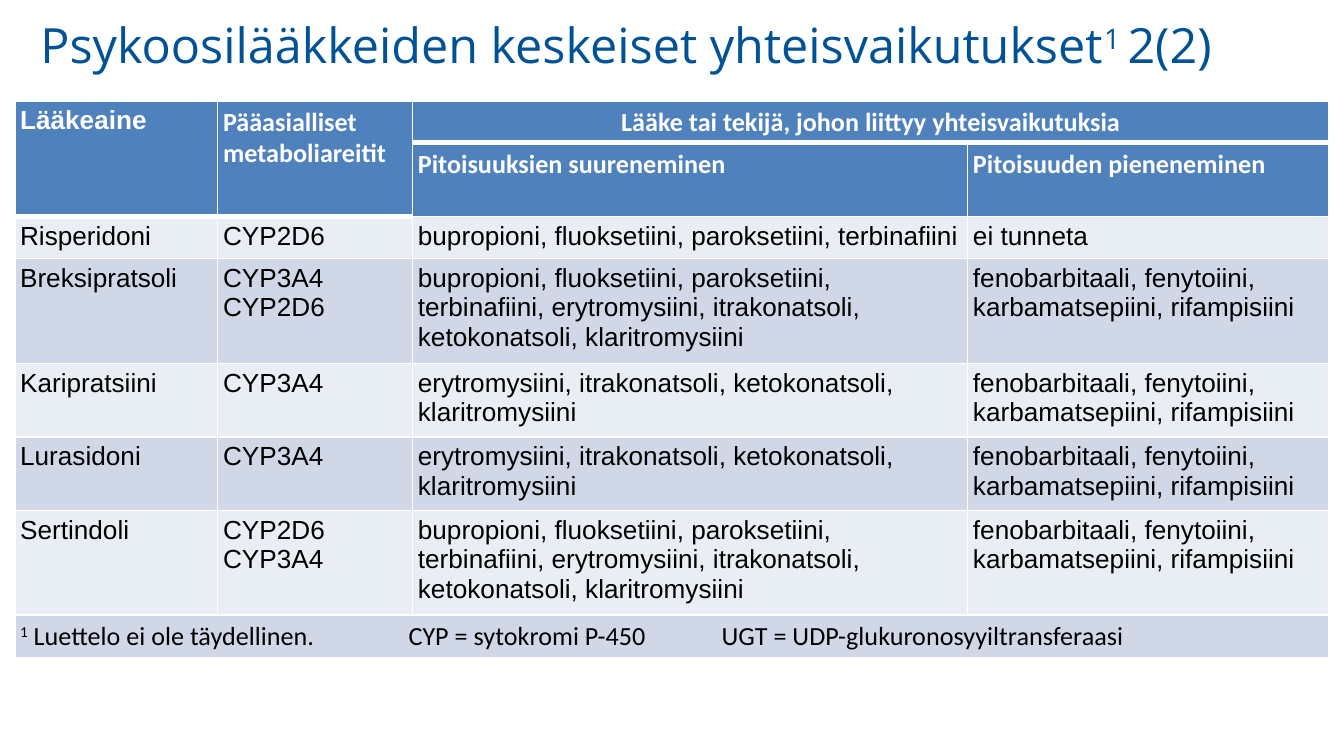
from dataclasses import dataclass
from itertools import product

from lxml import etree
from pptx import Presentation
from pptx.dml.color import RGBColor
from pptx.enum import text
from pptx.oxml import ns
from pptx.util import Inches, Pt


@dataclass(frozen=True)
class Theme:
    title: str = "005296"
    head: str = "4F81BD"
    light: str = "E9EDF4"
    dark: str = "D0D8E8"
    white: str = "FFFFFF"
    black: str = "000000"
    display: str = "Open Sans"
    label: str = "Calibri"
    body: str = "Arial"
    large: int = 26
    small: int = 14


THEME = Theme()
COLS = [1.51, 1.45, 4.13, 2.69]
ROWS = [0.22, 0.22, 0.22, 0.54, 0.38, 0.38, 0.54, 0.22]
AZOLES = "erytromysiini, itrakonatsoli, ketokonatsoli, klaritromysiini"
BASE = "bupropioni, fluoksetiini, paroksetiini, terbinafiini"
ALL = f"{BASE}, {AZOLES}"
LOWER = "fenobarbitaali, fenytoiini, karbamatsepiini, rifampisiini"
HEADS = [
    ["Lääkeaine", "Pääasialliset metaboliareitit",
     "Lääke tai tekijä, johon liittyy yhteisvaikutuksia", ""],
    ["", "", "Pitoisuuksien suureneminen", "Pitoisuuden pieneneminen"],
]
DRUGS = [
    ["Risperidoni", "CYP2D6", BASE, "ei tunneta"],
    ["Breksipratsoli", "CYP3A4\vCYP2D6", ALL, LOWER],
    ["Karipratsiini", "CYP3A4", AZOLES, LOWER],
    ["Lurasidoni", "CYP3A4", AZOLES, LOWER],
    ["Sertindoli", "CYP2D6\vCYP3A4", ALL, LOWER],
]
NOTE = ["Luettelo ei ole täydellinen.", "CYP = sytokromi P-450",
        "UGT = UDP-glukuronosyyiltransferaasi"]


def style(para, face, size, color, bold=False):
    font = para.font
    font.name, font.size, font.bold = face, Pt(size), bold
    font.color.rgb = RGBColor.from_string(color)


def add_runs(para, parts):
    for words, raised in parts:
        run = para.add_run()
        run.text = words
        if raised:
            run._r.get_or_add_rPr().set("baseline", "30000")


def add_tabs(para, stops):
    tabs = etree.SubElement(para._p.get_or_add_pPr(), ns.qn("a:tabLst"))
    for stop in stops:
        etree.SubElement(tabs, ns.qn("a:tab"), pos=str(Inches(stop)), algn="l")


def add_edges(cell, thick):
    props = cell._tc.get_or_add_tcPr()
    for side in "LRTB":
        width = 3 if side == "B" and thick else 1
        line = etree.SubElement(props, ns.qn(f"a:ln{side}"), w=str(Pt(width)))
        fill = etree.SubElement(line, ns.qn("a:solidFill"))
        etree.SubElement(fill, ns.qn("a:srgbClr"), val=THEME.white)


def format_cell(cell, fill, thick=False):
    add_edges(cell, thick)
    cell.fill.solid()
    cell.fill.fore_color.rgb = RGBColor.from_string(fill)
    cell.margin_left = cell.margin_right = Inches(0.04)
    cell.margin_top = cell.margin_bottom = Inches(0.04)


def place_title(slide, left, top, width, height):
    title = slide.shapes.title
    title.left, title.top = Inches(left), Inches(top)
    title.width, title.height = Inches(width), Inches(height)
    frame = title.text_frame
    frame.margin_left = Inches(0.19)
    frame.vertical_anchor = text.MSO_ANCHOR.MIDDLE
    frame.auto_size = text.MSO_AUTO_SIZE.SHAPE_TO_FIT_TEXT
    para = frame.paragraphs[0]
    para.alignment = text.PP_ALIGN.LEFT
    add_runs(para, [("Psykoosilääkkeiden keskeiset yhteisvaikutukset", False),
                    ("1 ", True), ("2(2)", False)])
    style(para, THEME.display, THEME.large, THEME.title)


def place_table(slide, left, top, width, height):
    holder = slide.shapes.add_table(
        len(ROWS), len(COLS), Inches(left), Inches(top),
        Inches(width), Inches(height))
    table = holder.table
    table.first_row = table.horz_banding = False
    for col, size in zip(table.columns, COLS):
        col.width = Inches(size)
    for row, size in zip(table.rows, ROWS):
        row.height = Inches(size)
    holder.width, holder.height = Inches(width), Inches(height)

    last = len(ROWS) - 1
    for row, col in product(range(len(ROWS)), range(len(COLS))):
        cell = table.cell(row, col)
        head = row < len(HEADS)
        band = THEME.dark if row % 2 else THEME.light
        thick = row == 0 or (row == 1 and col < 2)
        format_cell(cell, THEME.head if head else band, thick)
        if row == last:
            continue
        words = (HEADS + DRUGS)[row][col]
        if not words:
            continue
        cell.text = words
        face = THEME.label if head and col else THEME.body
        color = THEME.white if head else THEME.black
        style(cell.text_frame.paragraphs[0], face, THEME.small, color, head)

    for col in (0, 1):
        table.cell(0, col).merge(table.cell(1, col))
    table.cell(0, 2).merge(table.cell(0, 3))
    table.cell(0, 2).text_frame.paragraphs[0].alignment = text.PP_ALIGN.CENTER
    table.cell(last, 0).merge(table.cell(last, len(COLS) - 1))

    para = table.cell(last, 0).text_frame.paragraphs[0]
    add_tabs(para, [2.89, 5.22])
    add_runs(para, [("1", True), (" " + "\t".join(NOTE), False)])
    style(para, THEME.label, THEME.small, THEME.black)


def main():
    deck = Presentation()
    deck.slide_width = Inches(10)
    deck.slide_height = deck.slide_width * 9 // 16
    slide = deck.slides.add_slide(deck.slide_layouts[5])
    place_title(slide, 0.11, 0.06, 9.59, 0.54)
    place_table(slide, 0.11, 0.75, 9.79, 3.93)
    deck.save("out.pptx")


if __name__ == "__main__":
    main()
